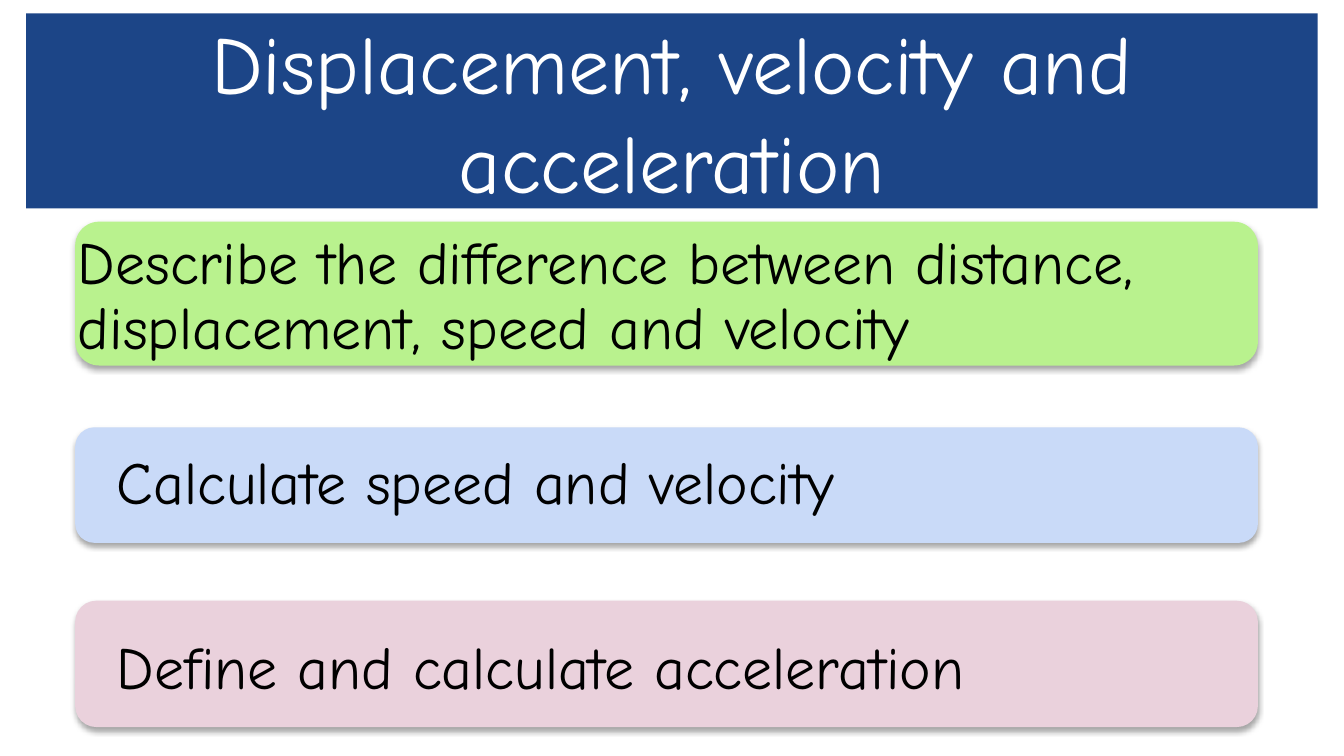
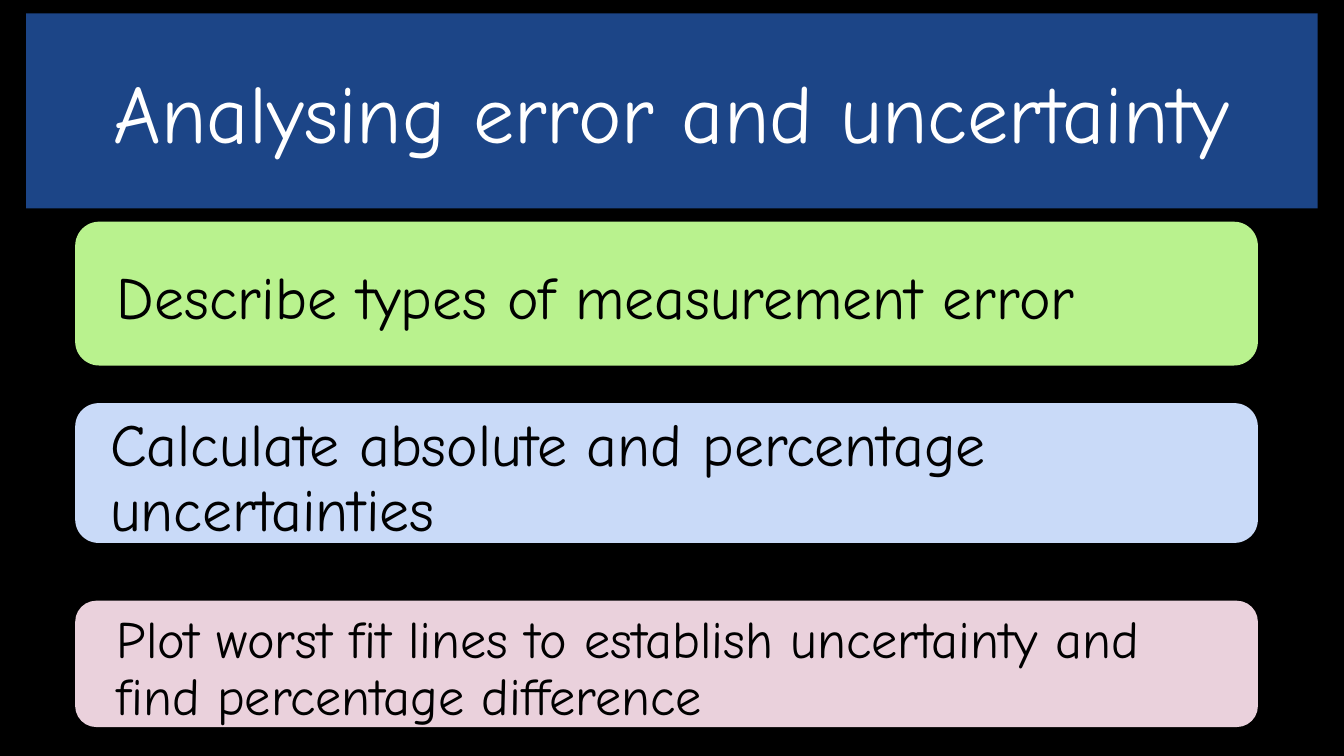
from collections import namedtuple

from lxml.etree import SubElement
from pptx import Presentation
from pptx.dml.color import RGBColor
from pptx.enum.shapes import MSO_SHAPE as Shape
from pptx.enum.text import MSO_ANCHOR as Anchor, PP_ALIGN as Align
from pptx.oxml.ns import qn
from pptx.util import Inches, Pt

COLORS = {
    "white": "FFFFFF",
    "black": "000000",
    "banner": "1C4587",
    "green": "B9F28E",
    "blue": "C9DAF8",
    "pink": "EAD1DC",
}
FONT = "Comic Neue"
CELL = Inches(0.1)  # the slide is a grid of 100 columns by 56.25 rows
COLUMNS, ROWS = 100, 56.25

# Boxes are in grid cells; a goal's text box is offset from its card
Box = namedtuple("Box", "col row cols rows")
Goal = namedtuple("Goal", "wording color card text size", defaults=[32])

BANNER = Box(1.95, 1, 96.1, 14.5)
GREEN_CARD = Box(5.6, 16.5, 88, 10.7)
PINK_CARD = Box(5.6, 44.7, 88, 9.4)
PINK_TEXT = Box(0.6, -0.2, 86.4, 10.7)

LESSONS = [
    ("Displacement, velocity and acceleration", "white", [
        Goal("Describe the difference between distance, displacement, speed and velocity",
             "green", GREEN_CARD, Box(-2.3, 0, 93.7, 11.3)),
        Goal("Calculate speed and velocity",
             "blue", Box(5.6, 31.8, 88, 8.6), Box(0.6, 0.4, 86.8, 7.8)),
        Goal("Define and calculate acceleration", "pink", PINK_CARD, PINK_TEXT),
    ]),
    ("Analysing error and uncertainty", "black", [
        Goal("Describe types of measurement error",
             "green", GREEN_CARD, Box(0.6, 0.4, 93.6, 10.9)),
        Goal("Calculate absolute and percentage uncertainties",
             "blue", Box(5.6, 30, 88, 10.4), Box(0.1, 1.5, 86.8, 8.4)),
        Goal("Plot worst fit lines to establish uncertainty and find percentage difference",
             "pink", PINK_CARD, PINK_TEXT, 28),
    ]),
]


def rgb(name):
    return RGBColor.from_string(COLORS[name])


def emu(box):
    return [round(cells * CELL) for cells in box]


def paint(shape, color):
    shape.shadow.inherit = False
    shape.fill.solid()
    shape.fill.fore_color.rgb = rgb(color)
    shape.line.fill.background()


def write(shape, wording, size, color, align, insets):
    frame = shape.text_frame
    frame.word_wrap = True
    frame.vertical_anchor = Anchor.MIDDLE
    frame.margin_left = frame.margin_right = Inches(insets[0])
    frame.margin_top = frame.margin_bottom = Inches(insets[1])
    paragraph = frame.paragraphs[0]
    paragraph.alignment = align
    run = paragraph.add_run()
    run.text = wording
    run.font.name = FONT
    run.font.size = Pt(size)
    run.font.color.rgb = rgb(color)
    return paragraph


def drop_shadow(shape):
    effects = shape._element.spPr.find(qn("a:effectLst"))
    shadow = SubElement(effects, qn("a:outerShdw"), blurRad=str(Pt(3.1)),
                        dist=str(Pt(1.8)), dir="5400000", rotWithShape="0")
    tint = SubElement(shadow, qn("a:srgbClr"), val=COLORS["black"])
    SubElement(tint, qn("a:alpha"), val="35000")


def add_goal(shapes, goal):
    # Rounded card
    card = shapes.add_shape(Shape.ROUNDED_RECTANGLE, *emu(goal.card))
    card.adjustments[0] = 0.167
    paint(card, goal.color)
    drop_shadow(card)

    # Wording, placed from the card's corner
    offset = goal.text
    place = Box(goal.card.col + offset.col, goal.card.row + offset.row,
                offset.cols, offset.rows)
    wording = shapes.add_textbox(*emu(place))
    paragraph = write(wording, goal.wording, goal.size, "black",
                      Align.LEFT, (0.25, 0))
    paragraph.line_spacing = 0.9


def add_banner(shapes, title, box):
    banner = shapes.add_shape(Shape.RECTANGLE, *emu(box))
    paint(banner, "banner")
    write(banner, title, 44, "white", Align.CENTER, (0.1, 0.05))


def add_lesson(deck, title, backdrop, goals):
    slide = deck.slides.add_slide(deck.slide_layouts[6])
    slide.background.fill.solid()
    slide.background.fill.fore_color.rgb = rgb(backdrop)

    # Learning goals
    goal_group = slide.shapes.add_group_shape()
    for goal in goals:
        add_goal(goal_group.shapes, goal)

    # Title banner
    add_banner(slide.shapes, title, BANNER)


def main():
    deck = Presentation()
    deck.slide_width = round(COLUMNS * CELL)
    deck.slide_height = round(ROWS * CELL)
    for title, backdrop, goals in LESSONS:
        add_lesson(deck, title, backdrop, goals)
    deck.save("out.pptx")


if __name__ == "__main__":
    main()
